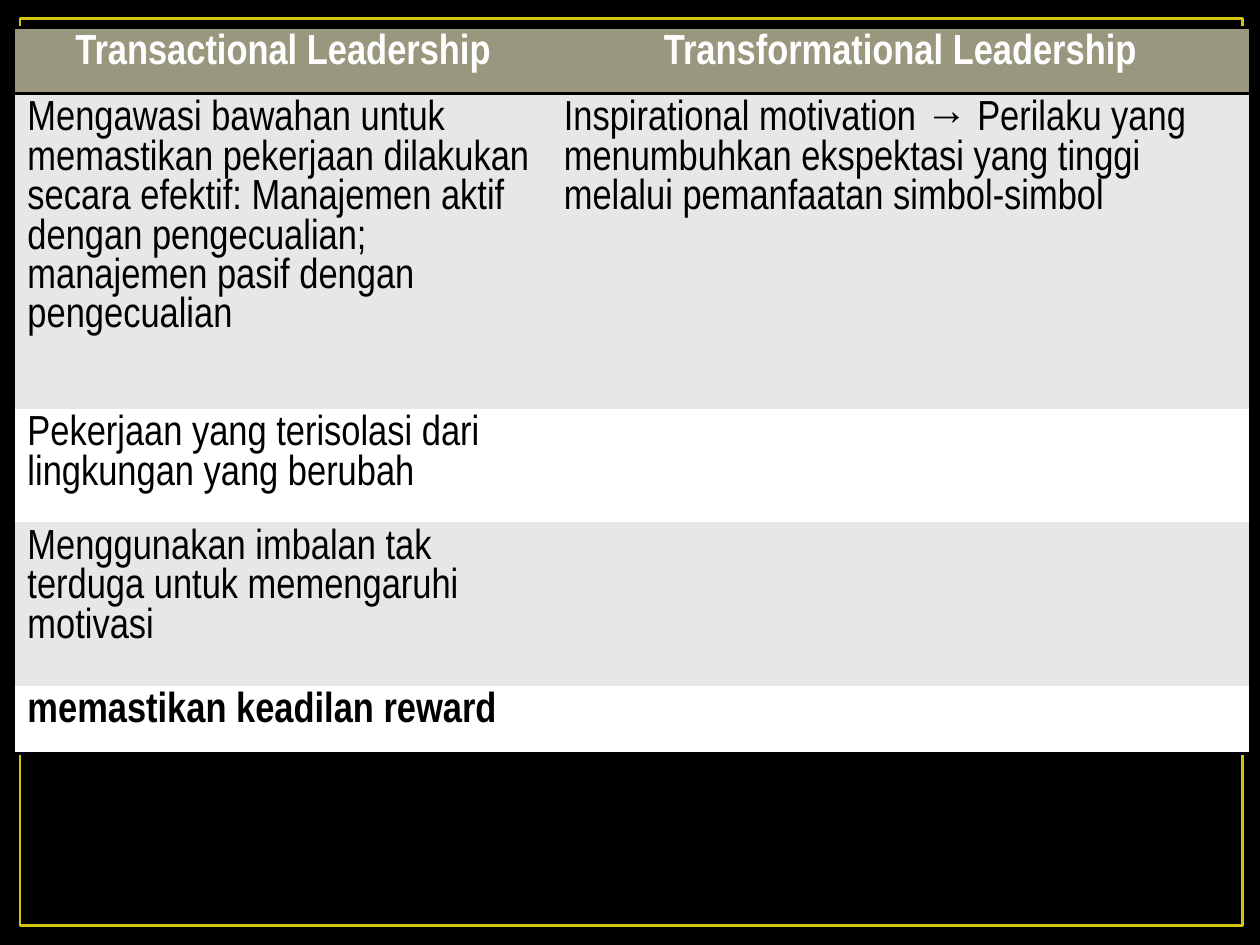
from lxml.etree import SubElement
from pptx import Presentation
from pptx.dml.color import RGBColor
from pptx.enum.shapes import MSO_SHAPE
from pptx.enum.text import PP_ALIGN
from pptx.oxml.ns import qn
from pptx.util import Pt

HEADINGS = ("Transactional Leadership", "Transformational Leadership")
ROWS = [
    HEADINGS,
    (
        "Mengawasi bawahan untuk memastikan pekerjaan dilakukan secara efektif: "
        "Manajemen aktif dengan pengecualian; manajemen pasif dengan pengecualian",
        "Inspirational motivation → Perilaku yang menumbuhkan ekspektasi yang tinggi "
        "melalui pemanfaatan simbol-simbol",
    ),
    ("Pekerjaan yang terisolasi dari lingkungan yang berubah", ""),
    ("Menggunakan imbalan tak terduga untuk memengaruhi motivasi", ""),
    ("memastikan keadilan reward", ""),
]
ROW_HEIGHTS = (38, 180, 65, 93.5, 38.5)
COLUMN_WIDTHS = (306.5, 399)
COLORS = {
    "background": "000000",
    "frame": "CFC60D",
    "heading": "99987F",
    "heading text": "FFFFFF",
    "odd": "E7E7E7",
    "even": "FFFFFF",
    "text": "000000",
    "rule": "000000",
}
FONT = "Arial Narrow"
PLAIN_STYLE = "{2D5ABB26-0587-4C30-8999-92F81FD0307C}"


def color(name):
    return RGBColor.from_string(COLORS[name])


def add_rules(cell, sides):
    properties = cell._tc.get_or_add_tcPr()
    for position, side in enumerate(sides):
        line = SubElement(properties, qn(f"a:ln{side}"), w=str(Pt(2)))
        fill = SubElement(line, qn("a:solidFill"))
        SubElement(fill, qn("a:srgbClr"), val=COLORS["rule"])
        properties.insert(position, line)


def add_frame(page):
    frame = page.shapes.add_shape(MSO_SHAPE.RECTANGLE, Pt(11.5), Pt(10.5), Pt(698.5), Pt(518.5))
    frame.shadow.inherit = False
    frame.fill.background()
    frame.line.color.rgb = color("frame")
    frame.line.width = Pt(1.5)


def fill_cell(cell, text, row):
    heading, last = row == 0, row == len(ROWS) - 1
    cell.fill.solid()
    cell.fill.fore_color.rgb = color("heading" if heading else "odd" if row % 2 else "even")
    add_rules(cell, "TB" if heading else "B" if last else "")
    cell.text = text
    paragraph = cell.text_frame.paragraphs[0]
    paragraph.alignment = PP_ALIGN.CENTER if heading else PP_ALIGN.LEFT
    paragraph.font.name = FONT
    paragraph.font.size = Pt(24)
    paragraph.font.bold = heading or last
    paragraph.font.color.rgb = color("heading text" if heading else "text")


def add_comparison(page):
    graphic = page.shapes.add_table(
        len(ROWS), len(HEADINGS), Pt(8.5), Pt(15.5), Pt(sum(COLUMN_WIDTHS)), Pt(sum(ROW_HEIGHTS))
    )
    table = graphic.table
    table._tbl.tblPr.find(qn("a:tableStyleId")).text = PLAIN_STYLE
    for column, width in zip(table.columns, COLUMN_WIDTHS):
        column.width = Pt(width)
    for row, (texts, height) in enumerate(zip(ROWS, ROW_HEIGHTS)):
        table.rows[row].height = Pt(height)
        for column, text in enumerate(texts):
            fill_cell(table.cell(row, column), text, row)


def main():
    """Build the leadership comparison slide."""
    deck = Presentation()
    deck.slide_width, deck.slide_height = Pt(720), Pt(540)
    page = deck.slides.add_slide(deck.slide_layouts[6])
    page.background.fill.solid()
    page.background.fill.fore_color.rgb = color("background")
    add_frame(page)
    add_comparison(page)
    deck.save("out.pptx")


if __name__ == "__main__":
    main()
